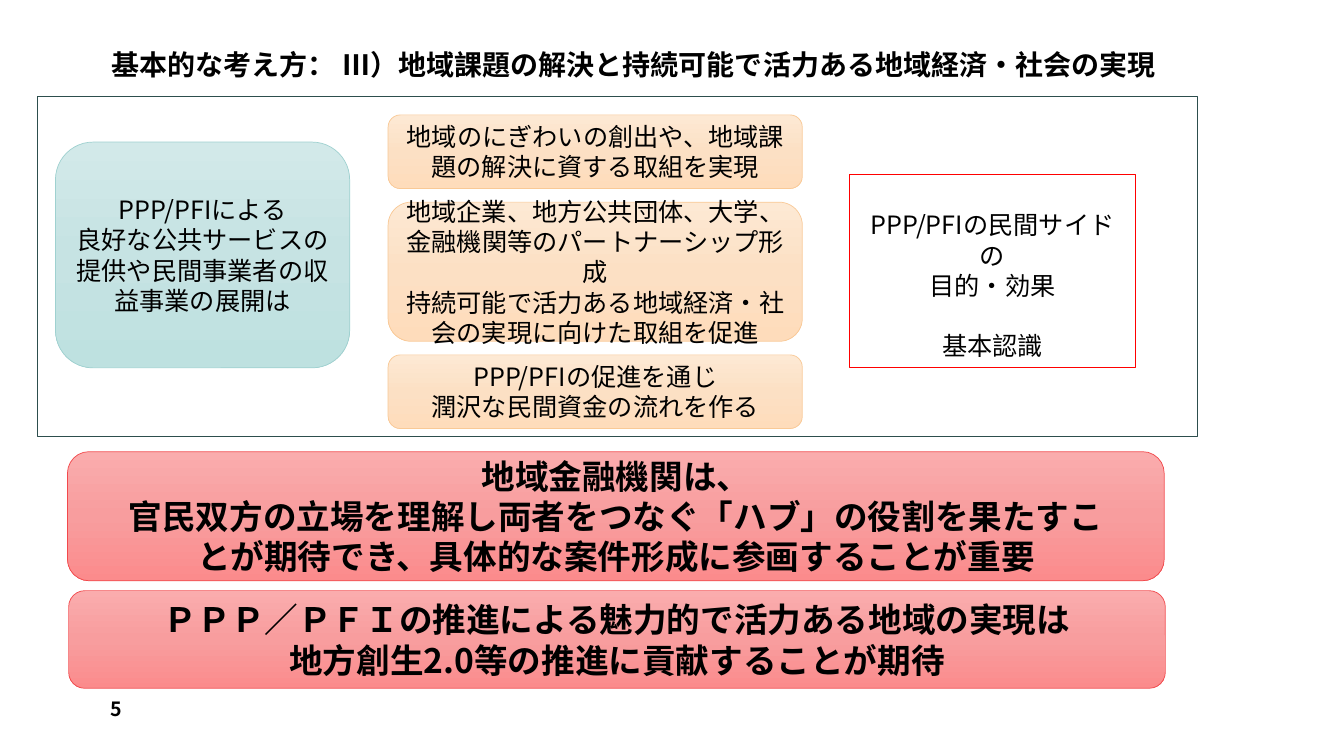
from copy import deepcopy
from dataclasses import dataclass

from pptx import Presentation
from pptx.dml.color import RGBColor
from pptx.enum.shapes import MSO_AUTO_SHAPE_TYPE as ShapeType
from pptx.enum.text import MSO_VERTICAL_ANCHOR as Anchor, PP_PARAGRAPH_ALIGNMENT as Align
from pptx.oxml.ns import qn
from pptx.oxml.xmlchemy import OxmlElement
from pptx.shapes.autoshape import Shape
from pptx.slide import Slide
from pptx.util import Pt

FONT = "Noto Sans CJK JP"
BLACK = RGBColor(0x00, 0x00, 0x00)
RED = RGBColor(0xFF, 0x00, 0x00)
DARK_TEAL = RGBColor(0x2D, 0x4E, 0x4D)
TEAL_LINE = RGBColor(0x9F, 0xD1, 0xD0)
TEAL_FILL = (RGBColor(0xD2, 0xE9, 0xE9), RGBColor(0xC6, 0xE3, 0xE3), RGBColor(0xBE, 0xE1, 0xE0))
ORANGE_LINE = RGBColor(0xF9, 0xC9, 0x96)
ORANGE_FILL = (RGBColor(0xFD, 0xE9, 0xD4), RGBColor(0xFC, 0xE0, 0xC4), RGBColor(0xFE, 0xDC, 0xBB))
ROSE_LINE = RGBColor(0xF2, 0x49, 0x4C)
ROSE_FILL = (RGBColor(0xFA, 0xAC, 0xAD), RGBColor(0xF8, 0x9D, 0x9E), RGBColor(0xFB, 0x8B, 0x8C))

BODY_LINE = 21.6
INITIATIVE_TOP = 82.1
INITIATIVE_GAP = 9.7


@dataclass(frozen=True)
class Box:
    left: float
    top: float
    width: float
    height: float


@dataclass(frozen=True)
class Look:
    line: RGBColor
    line_width: float
    gradient: tuple[RGBColor, ...] = ()
    size: float = 18
    bold: bool = False


@dataclass(frozen=True)
class Panel:
    box: Box
    look: Look
    lines: tuple[str, ...] = ()


TEAL = Look(TEAL_LINE, 0.5, TEAL_FILL)
ORANGE = Look(ORANGE_LINE, 0.5, ORANGE_FILL)
ROSE = Look(ROSE_LINE, 0.5, ROSE_FILL, 24, True)
FRAME = Look(DARK_TEAL, 1)
GOAL = Look(RED, 0.75)

SERVICE_PANEL = Panel(
    Box(39.6, 101.5, 210.2, 161.3), TEAL,
    ("PPP/PFIによる", "良好な公共サービスの提供や民間事業者の収益事業の展開は"))
INITIATIVES = (
    (52.6, ("地域のにぎわいの創出や、地域課題の解決に資する取組を実現",)),
    (99.4, ("地域企業、地方公共団体、大学、金融機関等のパートナーシップ形成",
            "持続可能で活力ある地域経済・社会の実現に向けた取組を促進")),
    (52.6, ("PPP/PFIの促進を通じ", "潤沢な民間資金の流れを作る")),
)
CONCLUSIONS = (
    Panel(Box(48.2, 322.6, 783.4, 92.2), ROSE,
          ("地域金融機関は、",
           "官民双方の立場を理解し両者をつなぐ「ハブ」の役割を果たすこ",
           "とが期待でき、具体的な案件形成に参画することが重要")),
    Panel(Box(49, 421.9, 783.4, 69.8), ROSE,
          ("ＰＰＰ／ＰＦＩの推進による魅力的で活力ある地域の実現は",
           "地方創生2.0等の推進に貢献することが期待")),
)
FRAME_PANEL = Panel(Box(26.6, 69.1, 828.7, 242.6), FRAME)
GOAL_PANEL = Panel(Box(607, 124.6, 203.8, 138.2), GOAL,
                   ("PPP/PFIの民間サイドの", "目的・効果", "基本認識"))


def place(box: Box) -> tuple[Pt, Pt, Pt, Pt]:
    return Pt(box.left), Pt(box.top), Pt(box.width), Pt(box.height)


def write_lines(shape: Shape, lines: tuple[str, ...], size: float, bold: bool,
                align: Align, anchor: Anchor) -> None:
    frame = shape.text_frame
    frame.word_wrap = True
    frame.vertical_anchor = anchor
    font_format = {"name": FONT, "size": Pt(size), "bold": bold}
    for index, line in enumerate(lines):
        paragraph = frame.add_paragraph() if index else frame.paragraphs[0]
        paragraph.alignment = align
        run = paragraph.add_run()
        run.text = line
        for name, value in font_format.items():
            setattr(run.font, name, value)
        run.font.color.rgb = BLACK
        east_asian = OxmlElement("a:ea")
        east_asian.set("typeface", FONT)
        run.font._element.find(qn("a:latin")).addnext(east_asian)


def fill_gradient(shape: Shape, colors: tuple[RGBColor, ...]) -> None:
    shape.fill.gradient()
    shape.fill.gradient_angle = 270
    stop_list = shape._element.spPr.find(".//" + qn("a:gsLst"))
    for _ in range(len(colors) - len(stop_list)):
        stop_list.insert(1, deepcopy(stop_list[0]))
    for index, (stop, color) in enumerate(zip(shape.fill.gradient_stops, colors)):
        stop.position = index / (len(colors) - 1)
        stop.color.rgb = color


def draw_panel(slide: Slide, panel: Panel) -> Shape:
    look = panel.look
    kind = ShapeType.ROUNDED_RECTANGLE if look.gradient else ShapeType.RECTANGLE
    shape = slide.shapes.add_shape(kind, *place(panel.box))
    shape.shadow.inherit = False
    if look.gradient:
        fill_gradient(shape, look.gradient)
    else:
        shape.fill.background()
    shape.line.color.rgb = look.line
    shape.line.width = Pt(look.line_width)
    write_lines(shape, panel.lines, look.size, look.bold, Align.CENTER, Anchor.MIDDLE)
    return shape


def draw_label(slide: Slide, box: Box, text: str, size: float, anchor: Anchor) -> Shape:
    label = slide.shapes.add_textbox(*place(box))
    write_lines(label, (text,), size, True, Align.LEFT, anchor)
    return label


def draw_initiatives(slide: Slide) -> None:
    top = INITIATIVE_TOP
    for height, lines in INITIATIVES:
        draw_panel(slide, Panel(Box(277.2, top, 295.9, height), ORANGE, lines))
        top += height + INITIATIVE_GAP


def draw_goal(slide: Slide) -> None:
    frame = draw_panel(slide, GOAL_PANEL).text_frame
    frame.vertical_anchor = Anchor.TOP
    frame.margin_top = Pt(3.6 + BODY_LINE)
    frame.paragraphs[-1].space_before = Pt(BODY_LINE)


def main() -> None:
    presentation = Presentation()
    presentation.slide_width = Pt(960)
    presentation.slide_height = Pt(540)
    slide = presentation.slides.add_slide(presentation.slide_layouts[6])
    title = draw_label(slide, Box(72.7, 30.2, 813.6, 31.7),
                       "基本的な考え方： Ⅲ）地域課題の解決と持続可能で活力ある地域経済・社会の実現",
                       20, Anchor.BOTTOM)
    title.text_frame.paragraphs[0].line_spacing = 0.9
    draw_label(slide, Box(72, 491.8, 210.2, 28.8), "5", 14, Anchor.MIDDLE)
    draw_panel(slide, FRAME_PANEL)
    draw_panel(slide, SERVICE_PANEL)
    draw_initiatives(slide)
    draw_goal(slide)
    for conclusion in CONCLUSIONS:
        draw_panel(slide, conclusion)
    presentation.save("out.pptx")


if __name__ == "__main__":
    main()
